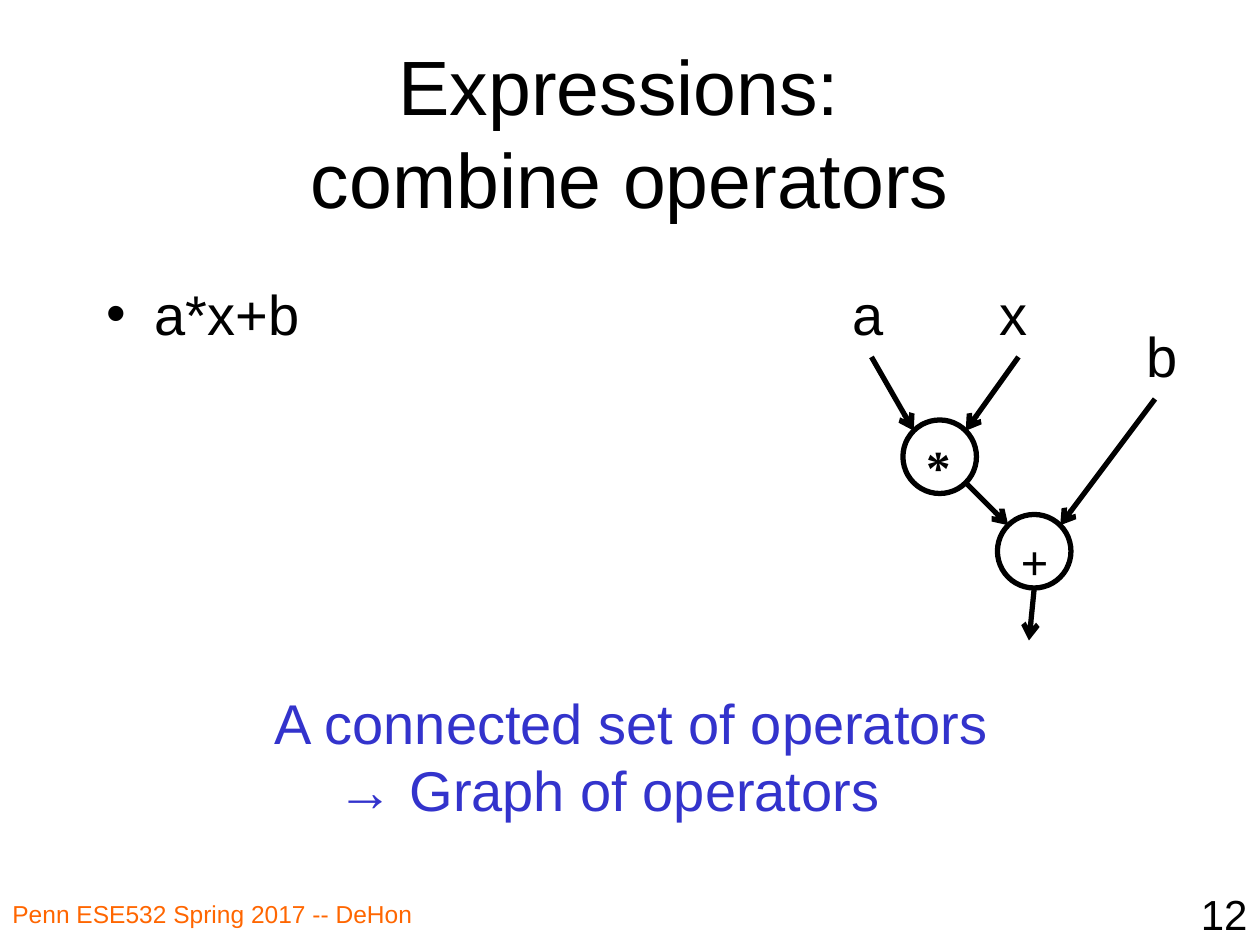
from math import sqrt

from lxml import etree
from pptx import Presentation
from pptx.dml.color import RGBColor
from pptx.enum.shapes import MSO_CONNECTOR as LINK, MSO_SHAPE as SHAPE
from pptx.enum.text import MSO_ANCHOR as ANCHOR, PP_ALIGN as ALIGN
from pptx.oxml.ns import qn
from pptx.util import Inches, Pt

COLORS = {"ink": "000000", "accent": "3333CC", "footer": "FF6600"}
COLUMNS, ROWS = 120, 90

deck = Presentation()
deck.slide_width, deck.slide_height = Inches(10), Inches(7.5)
page = deck.slides.add_slide(deck.slide_layouts[6])
cell_w, cell_h = deck.slide_width / COLUMNS, deck.slide_height / ROWS


def place(*cells):
    """Turn alternating column and row counts into slide lengths."""
    return [round(n * (cell_h if i % 2 else cell_w)) for i, n in enumerate(cells)]


def write(box, lines, size, color="ink", align=ALIGN.LEFT, font="Arial", bold=False):
    frame = box.text_frame
    frame.word_wrap = True
    for i, line in enumerate(lines):
        para = frame.add_paragraph() if i else frame.paragraphs[0]
        para.alignment = align
        span = para.add_run()
        span.text = line
        span.font.name, span.font.size, span.font.bold = font, Pt(size), bold
        span.font.color.rgb = RGBColor.from_string(COLORS[color])
    return frame


# Footer and page number
write(page.shapes.add_textbox(*place(0, 85, 46, 5)),
      ["Penn ESE532 Spring 2017 -- DeHon"], 14, "footer")
write(page.shapes.add_textbox(*place(95, 84, 25, 6)), ["12"], 24, align=ALIGN.RIGHT)

# Title
title = write(page.shapes.add_textbox(*place(9, 5, 102, 15)),
              ["Expressions: ", "combine operators"], 44, align=ALIGN.CENTER)
title.vertical_anchor = ANCHOR.MIDDLE

# Bulleted expression
body = write(page.shapes.add_textbox(*place(9, 26, 45, 54)), ["a*x+b"], 32)
bullet = body.paragraphs[0]._p.get_or_add_pPr()
bullet.set("marL", str(Inches(0.38)))
bullet.set("indent", str(-Inches(0.38)))
etree.SubElement(bullet, qn("a:buFont"), typeface="Arial")
etree.SubElement(bullet, qn("a:buChar"), char="•")

# Conclusion
conclusion = write(page.shapes.add_textbox(*place(25, 65, 70.5, 14)),
                   ["A connected set of operators", "\t→ Graph of operators"], 32, "accent")
conclusion.word_wrap = False

# Operator nodes
diameter = 7
radius = diameter / 2
nodes = {"*": (89.5, 43.5), "+": (98.5, 52.5)}
for symbol, (x, y) in nodes.items():
    node = page.shapes.add_shape(
        SHAPE.OVAL, *place(x - radius, y - radius, diameter, diameter))
    node.shadow.inherit = False
    node.fill.background()
    node.line.color.rgb = RGBColor.from_string(COLORS["ink"])
    node.line.width = Pt(3)
    frame = write(node, [symbol], 28, font="Times New Roman", bold=True)
    frame.vertical_anchor = ANCHOR.TOP

# Operand labels
for name, column, row in [("a", 80, 26), ("x", 94, 26), ("b", 108, 30)]:
    write(page.shapes.add_textbox(*place(column, row, 7, 7.7)), [name], 32)

# Arrows meet the nodes on their diagonals
reach = radius * sqrt(0.5)
(mul_x, mul_y), (add_x, add_y) = nodes.values()
arrows = [
    (83, 34, mul_x - reach, mul_y - reach),
    (97, 34, mul_x + reach, mul_y - reach),
    (110, 38, add_x + reach, add_y - reach),
    (mul_x + reach, mul_y + reach, add_x - reach, add_y - reach),
    (add_x, add_y + radius, 98, 61),
]
for ends in arrows:
    arrow = page.shapes.add_connector(LINK.STRAIGHT, *place(*ends))
    arrow.line.color.rgb = RGBColor.from_string(COLORS["ink"])
    arrow.line.width = Pt(3)
    etree.SubElement(arrow.line._get_or_add_ln(), qn("a:tailEnd"), type="arrow")
    etree.SubElement(arrow._element.spPr, qn("a:effectLst"))

deck.save("out.pptx")
